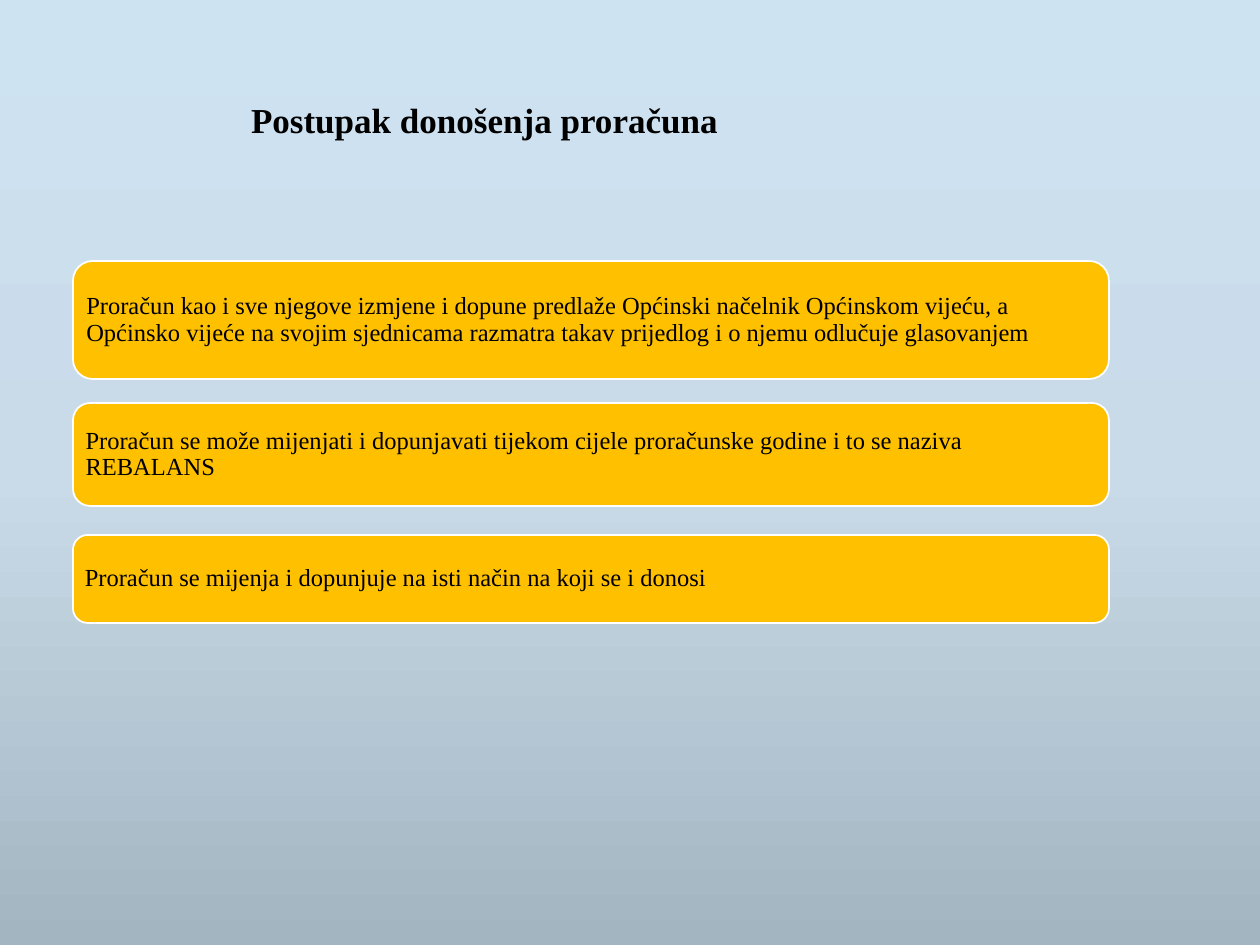
from copy import deepcopy
from dataclasses import dataclass

from pptx import Presentation
from pptx import util as u
from pptx.dml.color import RGBColor
from pptx.enum import shapes, text
from pptx.oxml.ns import qn

PX_PER_INCH = 126


@dataclass(frozen=True)
class Theme:
    font: str = "Times New Roman"
    ink: str = "000000"
    card: str = "FFC000"
    outline: str = "FFFFFF"
    sky: tuple = ((0, "CEE3F2"), (0.5, "C9DAE8"), (1, "A4B5C2"))
    title_size: int = 20
    body_size: int = 14


T = Theme()

TITLE = "Postupak donošenja proračuna"
# Top and height within the list, then wording
CARDS = (
    (0, 118, "Proračun kao i sve njegove izmjene i dopune predlaže Općinski načelnik "
             "Općinskom vijeću, a Općinsko vijeće na svojim sjednicama razmatra takav "
             "prijedlog i o njemu odlučuje glasovanjem"),
    (142, 103, "Proračun se može mijenjati i dopunjavati tijekom cijele proračunske "
               "godine i to se naziva REBALANS"),
    (274, 88, "Proračun se mijenja i dopunjuje na isti način na koji se i donosi"),
)


def px(n):
    return u.Emu(round(n * 914400 / PX_PER_INCH))


def rgb(value):
    return RGBColor.from_string(value)


def add_run(p, words, size, bold=False):
    r = p.add_run()
    r.text = words
    r.font.name = T.font
    r.font.size = u.Pt(size)
    r.font.bold = bold
    r.font.color.rgb = rgb(T.ink)


def paint_background(s):
    fill = s.background.fill
    fill.gradient()
    fill.gradient_angle = 270
    # The default gradient has two stops; add a middle one
    first = next(s.element.iter(qn("a:gs")))
    first.addnext(deepcopy(first))
    for stop, (position, color) in zip(fill.gradient_stops, T.sky):
        stop.position = position
        stop.color.rgb = rgb(color)


def place_title(s, x, y, w, h):
    sp = s.shapes.title
    sp.left, sp.top, sp.width, sp.height = map(px, (x, y, w, h))
    tf = sp.text_frame
    tf.word_wrap = True
    tf.auto_size = text.MSO_AUTO_SIZE.NONE
    p = tf.paragraphs[0]
    p.alignment = text.PP_ALIGN.CENTER
    add_run(p, TITLE, T.title_size, bold=True)


def add_card(s, x, y, w, h, words):
    sp = s.shapes.add_shape(shapes.MSO_SHAPE.ROUNDED_RECTANGLE, *map(px, (x, y, w, h)))
    sp.shadow.inherit = False
    sp.fill.solid()
    sp.fill.fore_color.rgb = rgb(T.card)
    sp.line.color.rgb = rgb(T.outline)
    sp.line.width = u.Pt(1)
    tf = sp.text_frame
    tf.word_wrap = True
    tf.vertical_anchor = text.MSO_ANCHOR.MIDDLE
    tf.margin_left = tf.margin_right = tf.margin_top = tf.margin_bottom = u.Inches(0.06)
    p = tf.paragraphs[0]
    p.alignment = text.PP_ALIGN.LEFT
    p.line_spacing = 0.9
    add_run(p, words, T.body_size)


def add_card_list(s, x, y, w):
    for top, height, words in CARDS:
        add_card(s, x, y + top, w, height, words)


def main():
    prs = Presentation()
    prs.slide_width, prs.slide_height = px(1260), px(945)
    s = prs.slides.add_slide(prs.slide_layouts[5])  # title only
    paint_background(s)
    place_title(s, 92, 92, 785, 55)
    add_card_list(s, 73, 261, 1036)
    prs.save("out.pptx")


if __name__ == "__main__":
    main()
